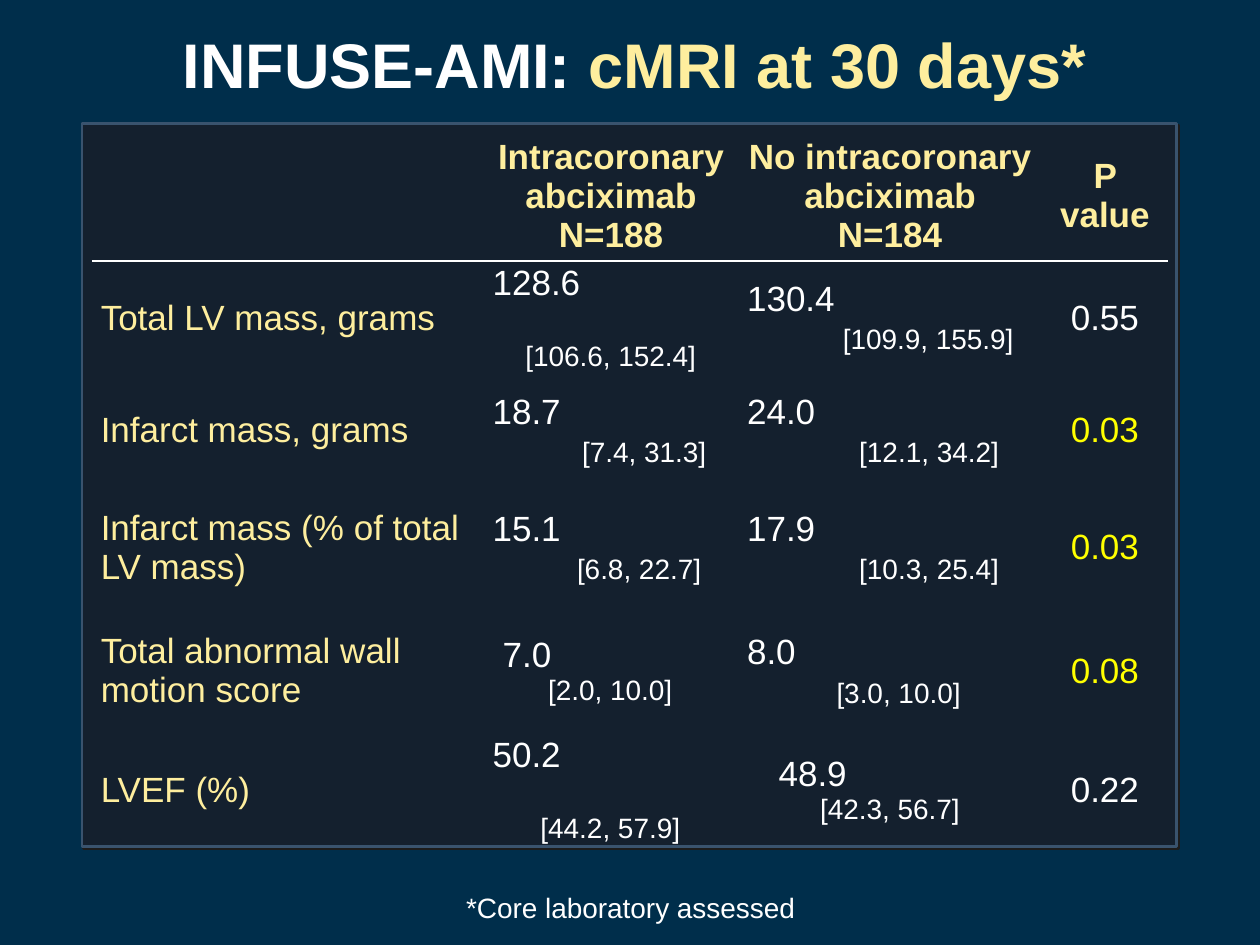
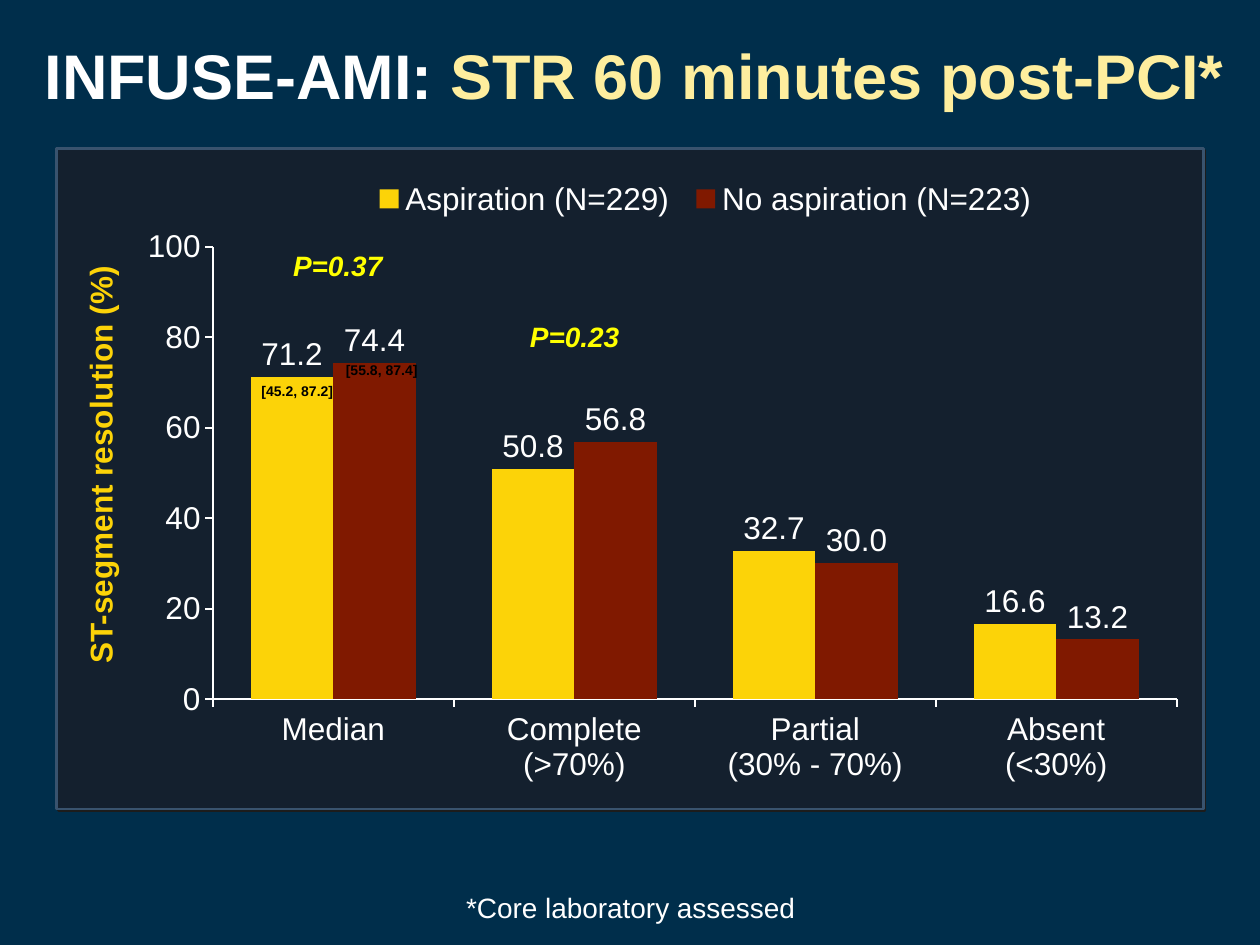
from dataclasses import dataclass

from lxml.etree import SubElement
from pptx import Presentation
from pptx.chart.data import CategoryChartData
from pptx.dml.color import RGBColor
from pptx.enum.chart import XL_CHART_TYPE as ChartType, XL_LABEL_POSITION as LabelPos
from pptx.enum.chart import XL_LEGEND_POSITION as LegendPos, XL_TICK_MARK as Tick
from pptx.enum.shapes import MSO_SHAPE as Shape
from pptx.enum.text import MSO_ANCHOR as Anchor, MSO_AUTO_SIZE as AutoSize, PP_ALIGN as Align
from pptx.oxml import parse_xml
from pptx.oxml.ns import nsdecls, qn
from pptx.util import Inches, Pt


@dataclass(frozen=True)
class Theme:
    font: str = "Arial"
    bg: str = "002E4B"
    panel: str = "14202E"
    edge: str = "39536E"
    shadow: str = "1C1C1C"
    white: str = "FFFFFF"
    black: str = "000000"
    cream: str = "FEEE9E"
    bright: str = "FFFF00"
    gold: str = "FCD308"
    rust: str = "801900"
    title: int = 36
    body: int = 20
    chart: int = 18
    small: int = 16
    tiny: int = 8


T = Theme()

STUDY = "INFUSE-AMI: "
FOOTNOTE = "*Core laboratory assessed"

CMRI_TITLE = "cMRI at 30 days*"
CMRI_PANEL = (0.65, 0.98, 8.69, 5.74)
CMRI_TABLE = (0.73, 1.04, 8.55, 5.65)
COL_WIDTHS = (3.11, 2.02, 2.41, 1)
ROW_HEIGHTS = (1.03, 0.88, 0.88, 0.98, 0.98, 0.88)
HEADERS = [
    "",
    "Intracoronary\nabciximab\nN=188",
    "No intracoronary\nabciximab\nN=184",
    "P value",
]
# median, quartiles, median indent (in), quartile indent (in), gap (pt)
CMRI_ROWS = [
    ("Total LV mass, grams", ("128.6", "[106.6, 152.4]", 0, 0.26, 22),
     ("130.4", "[109.9, 155.9]", 0, 0.76, 3), "0.55", T.white),
    ("Infarct mass, grams", ("18.7", "[7.4, 31.3]", 0, 0.71, 3),
     ("24.0", "[12.1, 34.2]", 0, 0.89, 3), "0.03", T.bright),
    ("Infarct mass (% of total LV mass)", ("15.1", "[6.8, 22.7]", 0, 0.67, 3),
     ("17.9", "[10.3, 25.4]", 0, 0.89, 3), "0.03", T.bright),
    ("Total abnormal wall motion score", ("7.0", "[2.0, 10.0]", 0.08, 0.44, 0),
     ("8.0", "[3.0, 10.0]", 0, 0.71, 4), "0.08", T.bright),
    ("LVEF (%)", ("50.2", "[44.2, 57.9]", 0, 0.38, 22),
     ("48.9", "[42.3, 56.7]", 0.25, 0.58, 0), "0.22", T.white),
]

STR_TITLE = "STR 60 minutes post-PCI*"
STR_PANEL = (0.45, 1.18, 9.1, 5.24)
STR_CHART = (1.01, 1.25, 8.5, 5.06)
PLOT_LAYOUT = (0.08, 0.14, 0.9, 0.71)
LEGEND_LAYOUT = (0.22, 0.03, 0.64, 0.07)
CATEGORIES = ["Median", "Complete\n(>70%)", "Partial\n(30% - 70%)", "Absent\n(<30%)"]
SERIES = [
    ("Aspiration (N=229)", (71.2, 50.8, 32.7, 16.6), T.gold),
    ("No aspiration (N=223)", (74.4, 56.8, 30, 13.2), T.rust),
]
AXIS_LABEL = ("ST-segment resolution (%)", (-0.9, 3.49, 3.39, 0.4))
QUARTILES = [("[45.2, 87.2]", (1.97, 2.99, 0.78, 0.24)), ("[55.8, 87.4]", (2.64, 2.82, 0.78, 0.24))]
P_VALUES = [("P=0.37", (2.22, 1.92, 0.92, 0.37)), ("P=0.23", (4.1, 2.49, 0.92, 0.37))]


def rgb(value):
    return RGBColor.from_string(value)


def box(at):
    return [Inches(v) for v in at]


def style(font, size, color, bold=False, italic=False):
    font.name = T.font
    font.size = Pt(size)
    font.bold = bold
    font.italic = italic
    font.color.rgb = rgb(color)


def add_label(s, text, at, size, color, bold=False, italic=False):
    sp = s.shapes.add_textbox(*box(at))
    tf = sp.text_frame
    tf.word_wrap = False
    tf.auto_size = AutoSize.SHAPE_TO_FIT_TEXT
    tf.text = text
    p = tf.paragraphs[0]
    p.alignment = Align.CENTER
    style(p.runs[0].font, size, color, bold, italic)
    return sp


def add_title(s, topic, top):
    sp = s.shapes.add_textbox(*box((0.17, top, 9.73, 0.83)))
    tf = sp.text_frame
    tf.word_wrap = True
    tf.vertical_anchor = Anchor.MIDDLE
    tf.margin_left = tf.margin_right = Inches(0.05)
    p = tf.paragraphs[0]
    p.alignment = Align.CENTER
    p.line_spacing = 0.9
    for text, color in ((STUDY, T.white), (topic, T.cream)):
        r = p.add_run()
        r.text = text
        style(r.font, T.title, color, True)


def add_panel(s, at):
    sp = s.shapes.add_shape(Shape.RECTANGLE, *box(at))
    sp.fill.solid()
    sp.fill.fore_color.rgb = rgb(T.panel)
    sp.line.color.rgb = rgb(T.edge)
    sp.line.width = Pt(1.5)
    sp.shadow.inherit = False
    effects = sp._element.spPr.find(qn("a:effectLst"))
    shadow = SubElement(effects, qn("a:outerShdw"), dist=str(Pt(1.4)), dir="2700000")
    SubElement(shadow, qn("a:srgbClr"), val=T.shadow)


def start_slide(prs, topic, title_top, panel):
    s = prs.slides.add_slide(prs.slide_layouts[6])
    s.background.fill.solid()
    s.background.fill.fore_color.rgb = rgb(T.bg)
    add_panel(s, panel)
    add_title(s, topic, title_top)
    add_label(s, FOOTNOTE, (3.58, 7.02, 2.85, 0.37), T.small, T.white)
    return s


def fill_cell(cell, text, color, align=Align.CENTER, bold=False):
    cell.text_frame.text = text
    for p in cell.text_frame.paragraphs:
        p.alignment = align
        style(p.font, T.body, color, bold)
        for r in p.runs:
            style(r.font, T.body, color, bold)


def fill_median(cell, median, quartiles, median_indent, quartile_indent, gap):
    fill_cell(cell, f"{median}\n{quartiles}", T.white, Align.LEFT)
    first, second = cell.text_frame.paragraphs
    for p, indent in ((first, median_indent), (second, quartile_indent)):
        p._p.get_or_add_pPr().set("marL", str(Inches(indent)))
    second.space_before = Pt(gap)
    style(second.runs[0].font, T.small, T.white)


def underline(cell):
    cell._tc.get_or_add_tcPr().insert(0, parse_xml(
        f'<a:lnB {nsdecls("a")} w="{Pt(1)}"><a:solidFill>'
        f'<a:srgbClr val="{T.white}"/></a:solidFill></a:lnB>'))


def add_cmri_table(s):
    table = s.shapes.add_table(len(ROW_HEIGHTS), len(COL_WIDTHS), *box(CMRI_TABLE)).table
    table.first_row = table.horz_banding = False
    table._tbl.tblPr.find(qn("a:tableStyleId")).text = "{2D5ABB26-0587-4C30-8999-92F81FD0307C}"
    for col, width in zip(table.columns, COL_WIDTHS):
        col.width = Inches(width)
    for row, height in zip(table.rows, ROW_HEIGHTS):
        row.height = Inches(height)
    for cell in table.iter_cells():
        cell.fill.background()
        cell.vertical_anchor = Anchor.MIDDLE
        cell.margin_left = cell.margin_right = Inches(0.07)
        cell.margin_top = cell.margin_bottom = 0
    for i, text in enumerate(HEADERS):
        fill_cell(table.cell(0, i), text, T.cream, bold=True)
        underline(table.cell(0, i))
    for i, (label, treated, control, p_value, p_color) in enumerate(CMRI_ROWS, 1):
        fill_cell(table.cell(i, 0), label, T.cream, Align.LEFT)
        fill_median(table.cell(i, 1), *treated)
        fill_median(table.cell(i, 2), *control)
        fill_cell(table.cell(i, 3), p_value, p_color)


def layout_xml(bounds, inner=False):
    target = '<c:layoutTarget val="inner"/>' if inner else ""
    modes = "".join(f'<c:{k}Mode val="edge"/>' for k in "xy")
    sizes = "".join(f'<c:{k} val="{v}"/>' for k, v in zip("xywh", bounds))
    return parse_xml(f'<c:layout {nsdecls("c")}><c:manualLayout>{target}{modes}{sizes}'
                     "</c:manualLayout></c:layout>")


def add_str_chart(s):
    data = CategoryChartData(number_format="#,##0.0")
    data.categories = CATEGORIES
    for name, values, _ in SERIES:
        data.add_series(name, values)
    chart = s.shapes.add_chart(ChartType.COLUMN_CLUSTERED, *box(STR_CHART), data).chart
    style(chart.font, T.chart, T.white)
    chart.has_title = False

    chart.has_legend = True
    legend = chart.legend
    legend.position = LegendPos.TOP
    legend.include_in_layout = False
    legend._element.find(qn("c:legendPos")).addnext(layout_xml(LEGEND_LAYOUT))
    area = chart._chartSpace.chart.plotArea
    for old in area.findall(qn("c:layout")):
        area.remove(old)
    area.insert(0, layout_xml(PLOT_LAYOUT, inner=True))

    plot = chart.plots[0]
    plot.gap_width = 92
    plot.overlap = 0
    plot.vary_by_categories = False
    for series, (_, _, color) in zip(plot.series, SERIES):
        series.format.fill.solid()
        series.format.fill.fore_color.rgb = rgb(color)
        labels = series.data_labels
        labels.show_value = True
        labels.position = LabelPos.OUTSIDE_END
        labels.number_format = "#,##0.0"
        labels.number_format_is_linked = False
        style(labels.font, T.chart, T.white)

    for axis in (chart.category_axis, chart.value_axis):
        axis.has_major_gridlines = False
        axis.major_tick_mark = Tick.OUTSIDE
        axis.format.line.color.rgb = rgb(T.white)
        axis.format.line.width = Pt(1)
        style(axis.tick_labels.font, T.chart, T.white)
    values = chart.value_axis
    values.minimum_scale, values.maximum_scale, values.major_unit = 0, 100, 20
    values.tick_labels.number_format = "0"
    values.tick_labels.number_format_is_linked = False


def main():
    prs = Presentation()
    prs.slide_width, prs.slide_height = Inches(10), Inches(7.5)

    s = start_slide(prs, CMRI_TITLE, 0.13, CMRI_PANEL)
    add_cmri_table(s)

    s = start_slide(prs, STR_TITLE, 0.21, STR_PANEL)
    add_str_chart(s)
    add_label(s, *AXIS_LABEL, T.chart, T.gold, bold=True).rotation = 270
    for text, at in QUARTILES:
        add_label(s, text, at, T.tiny, T.black, bold=True)
    for text, at in P_VALUES:
        add_label(s, text, at, T.small, T.bright, bold=True, italic=True)

    prs.save("out.pptx")


if __name__ == "__main__":
    main()
